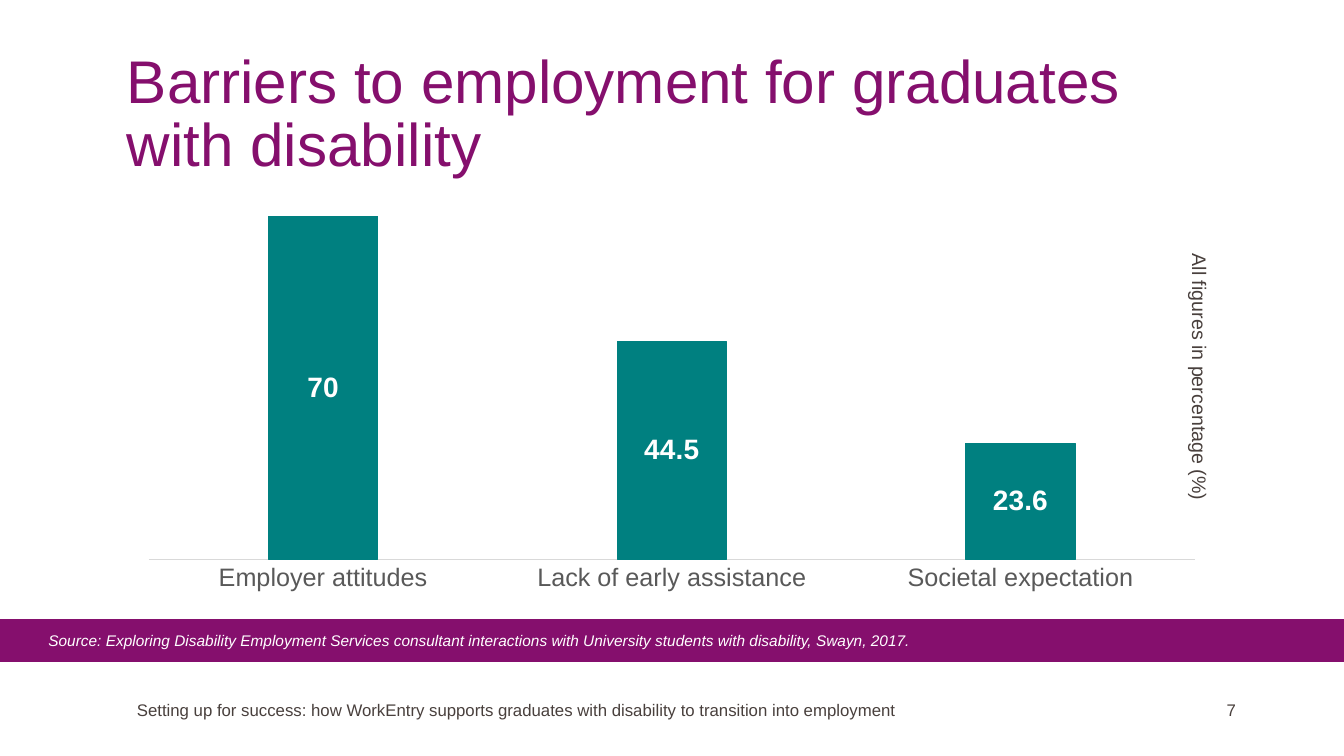
import pptx
import pptx.chart.data
import pptx.dml.color
import pptx.enum.chart
import pptx.enum.shapes
import pptx.enum.text
import pptx.oxml
import pptx.oxml.ns
import pptx.util
from pptx.util import Cm, Pt

PURPLE, TEAL, BROWN = "850F6D", "008080", "49403D"
GREY, RULE, WHITE = "595959", "D9D9D9", "FFFFFF"
WIDTH, HEIGHT = 33.87, 19.05
MARGIN, CONTENT_WIDTH = 3.2, 27.46
FOOTER_TOP, FOOTER_HEIGHT = 16.71, 2.34


def color(hex_string):
    return pptx.dml.color.RGBColor.from_string(hex_string)


class SlideBuilder:
    font_name = "Arial"

    def __init__(self, slide):
        self.slide = slide

    def style_font(self, font, size, hex_string, bold=False, italic=False):
        font.name = self.font_name
        font.size = Pt(size)
        font.bold = bold
        font.italic = italic
        font.color.rgb = color(hex_string)

    def band(self, left, top, width, height, fill):
        band = self.slide.shapes.add_shape(
            pptx.enum.shapes.MSO_SHAPE.RECTANGLE, Cm(left), Cm(top), Cm(width), Cm(height))
        band.shadow.inherit = False
        band.fill.solid()
        band.fill.fore_color.rgb = color(fill)
        band.line.fill.background()

    def rule(self, left, right, y, stroke, weight):
        rule = self.slide.shapes.add_connector(
            pptx.enum.shapes.MSO_CONNECTOR.STRAIGHT, Cm(left), Cm(y), Cm(right), Cm(y))
        rule.line.color.rgb = color(stroke)
        rule.line.width = Pt(weight)
        rule._element.spPr.append(pptx.oxml.parse_xml(
            f"<a:effectLst {pptx.oxml.ns.nsdecls('a')}/>"))

    def text(self, words, left, top, width, height, size, hex_string, italic=False,
             middle=False, wrap=True, rotation=0, line_spacing=None, inset=None):
        box = self.slide.shapes.add_textbox(Cm(left), Cm(top), Cm(width), Cm(height))
        box.rotation = rotation
        frame = box.text_frame
        frame.word_wrap = wrap
        anchors = pptx.enum.text.MSO_ANCHOR
        frame.vertical_anchor = anchors.MIDDLE if middle else anchors.TOP
        if inset is not None:
            frame.margin_left = frame.margin_right = Cm(inset)
            frame.margin_top = frame.margin_bottom = Cm(inset)
        paragraph = frame.paragraphs[0]
        paragraph.text = words
        if line_spacing:
            paragraph.line_spacing = Pt(line_spacing)
        self.style_font(paragraph.font, size, hex_string, italic=italic)

    def column_chart(self, values, left, top, width, height, fill, maximum):
        data = pptx.chart.data.CategoryChartData()
        data.categories = list(values)
        data.add_series("Series 1", values.values())
        chart = self.slide.shapes.add_chart(
            pptx.enum.chart.XL_CHART_TYPE.COLUMN_CLUSTERED,
            Cm(left), Cm(top), Cm(width), Cm(height), data).chart
        chart.has_legend = False
        chart.has_title = False
        self.style_font(chart.font, 10, "000000")

        # Axes
        value_axis = chart.value_axis
        value_axis.minimum_scale, value_axis.maximum_scale = 0, maximum
        value_axis.has_major_gridlines = False
        value_axis.visible = False
        category_axis = chart.category_axis
        category_axis.major_tick_mark = pptx.enum.chart.XL_TICK_MARK.NONE
        category_axis.format.line.color.rgb = color(RULE)
        category_axis.format.line.width = Pt(0.75)
        self.style_font(category_axis.tick_labels.font, 18, GREY)

        # Columns and their values
        plot = chart.plots[0]
        plot.gap_width, plot.overlap = 219, -27
        plot.vary_by_categories = False
        columns = plot.series[0].format
        columns.fill.solid()
        columns.fill.fore_color.rgb = color(fill)
        columns.line.color.rgb = color(fill)
        columns.line.width = Pt(0.75)
        labels = plot.series[0].data_labels
        labels.show_value = True
        labels.position = pptx.enum.chart.XL_LABEL_POSITION.CENTER
        self.style_font(labels.font, 20, WHITE, bold=True)

        # Plot area as shares of the chart frame
        plot_area = chart._chartSpace.chart.plotArea
        for layout in plot_area.findall(pptx.oxml.ns.qn("c:layout")):
            plot_area.remove(layout)
        shares = "".join(f'<c:{key} val="{share}"/>' for key, share in
                         (("x", 0.02), ("y", 0.02), ("w", 0.96), ("h", 0.89)))
        plot_area.insert(0, pptx.oxml.parse_xml(
            f"<c:layout {pptx.oxml.ns.nsdecls('c')}><c:manualLayout>"
            '<c:layoutTarget val="inner"/><c:xMode val="edge"/><c:yMode val="edge"/>'
            f"{shares}</c:manualLayout></c:layout>"))


def main():
    deck = pptx.Presentation()
    deck.slide_width, deck.slide_height = Cm(WIDTH), Cm(HEIGHT)
    builder = SlideBuilder(deck.slides.add_slide(deck.slide_layouts[6]))

    # Source band
    builder.rule(0, WIDTH, 16.51, PURPLE, 10)
    builder.band(0, 15.6, WIDTH, 1.07, PURPLE)

    # Title
    builder.text("Barriers to employment for graduates with disability",
                 MARGIN, 1.32, CONTENT_WIDTH, 2.03, 43, PURPLE, line_spacing=45, inset=0)

    # Barriers chart
    barriers = {"Employer attitudes": 70, "Lack of early assistance": 44.5,
                "Societal expectation": 23.6}
    builder.column_chart(barriers, MARGIN, 3.99, CONTENT_WIDTH, 11.1, TEAL, maximum=80)

    # Footer and slide number
    builder.text("Setting up for success: how WorkEntry supports graduates with disability "
                 "to transition into employment",
                 MARGIN, FOOTER_TOP, 21.56, FOOTER_HEIGHT, 12, BROWN, middle=True)
    builder.text("7", MARGIN + CONTENT_WIDTH, FOOTER_TOP, 2.16, FOOTER_HEIGHT, 12, BROWN,
                 middle=True)

    # Source and unit note
    builder.text("Source: Exploring Disability Employment Services consultant interactions "
                 "with University students with disability, Swayn, 2017.",
                 0.97, 15.77, 31.93, 0.74, 11, WHITE, italic=True)
    builder.text("All figures in percentage (%)", 26.85, 9.09, 6.76, 0.86, 14, BROWN,
                 wrap=False, rotation=90)

    deck.save("out.pptx")


if __name__ == "__main__":
    main()
